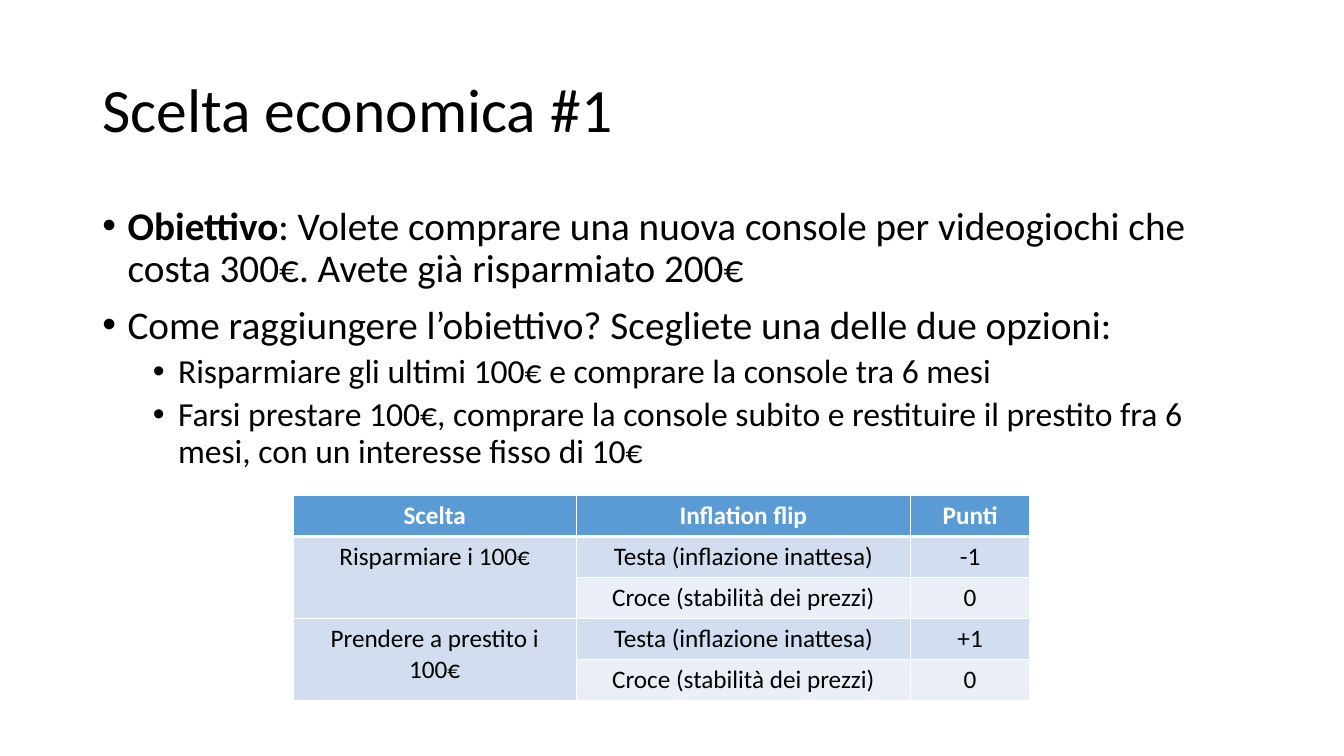
from dataclasses import dataclass

from lxml import etree
from pptx import Presentation
from pptx import util as u
from pptx.dml.color import RGBColor
from pptx.enum import text
from pptx.oxml import ns

EMU_PER_PX = 9525
BLACK, WHITE, HEADER_BLUE = "000000", "FFFFFF", "5B9BD5"
BAND_FILLS = ("D2DEEF", "EAEFF7")


@dataclass(frozen=True)
class Bullet:
    """A list entry, with an optional bold lead-in."""

    wording: str
    lead: str = ""
    level: int = 0


@dataclass(frozen=True)
class Choice:
    """An economic choice and its points for each coin side."""

    name: str
    heads_points: str
    tails_points: str


BULLETS = (
    Bullet(": Volete comprare una nuova console per videogiochi che costa 300€. "
           "Avete già risparmiato 200€", lead="Obiettivo"),
    Bullet("Come raggiungere l’obiettivo? Scegliete una delle due opzioni:"),
    Bullet("Risparmiare gli ultimi 100€ e comprare la console tra 6 mesi", level=1),
    Bullet("Farsi prestare 100€, comprare la console subito e restituire il prestito "
           "fra 6 mesi, con un interesse fisso di 10€", level=1),
)
HEADINGS = ("Scelta", "Inflation flip", "Punti")
COLUMN_WIDTHS = (270, 318, 114)
ROW_HEIGHT = 39
CHOICES = (
    Choice("Risparmiare i 100€", "-1", "0"),
    Choice("Prendere a prestito i 100€", "+1", "0"),
)


def px(length: int) -> u.Emu:
    """Turn pixels into EMU."""
    return u.Emu(length * EMU_PER_PX)


def rgb(value: str) -> RGBColor:
    """Turn a hex string into a colour."""
    return RGBColor.from_string(value)


def write(paragraph, wording: str, *, size: int, color: str = BLACK,
          bold: bool = False, align=text.PP_ALIGN.LEFT) -> None:
    """Append a formatted run to a paragraph."""
    paragraph.alignment = align
    run = paragraph.add_run()
    run.text = wording
    run.font.name = "Calibri"
    run.font.size = u.Pt(size)
    run.font.bold = bold
    run.font.color.rgb = rgb(color)


def place(placeholder, left: int, top: int, width: int, height: int, anchor):
    """Move a placeholder and return its prepared text frame."""
    placeholder.left, placeholder.top = px(left), px(top)
    placeholder.width, placeholder.height = px(width), px(height)
    frame = placeholder.text_frame
    frame.word_wrap = True
    frame.auto_size = text.MSO_AUTO_SIZE.NONE
    frame.vertical_anchor = anchor
    return frame


def add_bullet(paragraph, bullet: Bullet) -> None:
    """Fill one list paragraph."""
    paragraph.level = bullet.level
    paragraph.line_spacing = 0.9
    paragraph.space_before = u.Pt(5 if bullet.level else 10)
    size = 24 if bullet.level else 28
    if bullet.lead:
        write(paragraph, bullet.lead, size=size, bold=True)
    write(paragraph, bullet.wording, size=size)
    properties = paragraph._p.get_or_add_pPr()
    properties.set("marL", str(px(24 + 48 * bullet.level)))
    properties.set("indent", str(px(-24)))
    etree.SubElement(properties, ns.qn("a:buFont"), typeface="Arial")
    etree.SubElement(properties, ns.qn("a:buChar"), char="•")


def style_cell(cell, fill: str, *, top: int = 1, bottom: int = 1) -> None:
    """Give a cell its white borders, in points, and its fill."""
    properties = cell._tc.get_or_add_tcPr()
    for side, width in (("L", 1), ("R", 1), ("T", top), ("B", bottom)):
        line = etree.SubElement(properties, ns.qn(f"a:ln{side}"), w=str(u.Pt(width)))
        solid = etree.SubElement(line, ns.qn("a:solidFill"))
        etree.SubElement(solid, ns.qn("a:srgbClr"), val=WHITE)
    cell.fill.solid()
    cell.fill.fore_color.rgb = rgb(fill)


def add_points_table(slide) -> None:
    """Draw the table of choices, coin flips and points."""
    rows = [HEADINGS]
    for choice in CHOICES:
        rows.append((choice.name, "Testa (inflazione inattesa)", choice.heads_points))
        rows.append(("", "Croce (stabilità dei prezzi)", choice.tails_points))
    points = slide.shapes.add_table(
        len(rows), len(HEADINGS), px(279), px(472),
        px(sum(COLUMN_WIDTHS)), px(ROW_HEIGHT * len(rows))).table
    for column, width in zip(points.columns, COLUMN_WIDTHS):
        column.width = px(width)
    for r, entries in enumerate(rows):
        points.rows[r].height = px(ROW_HEIGHT)
        header = r == 0
        for c, entry in enumerate(entries):
            cell = points.cell(r, c)
            band = BAND_FILLS[0 if c == 0 else (r - 1) % 2]
            style_cell(cell, HEADER_BLUE if header else band,
                       top=3 if r == 1 else 1, bottom=3 if header else 1)
            if entry:
                write(cell.text_frame.paragraphs[0], entry, size=18, bold=header,
                      color=WHITE if header else BLACK, align=text.PP_ALIGN.CENTER)
    for r in range(1, len(rows), 2):
        points.cell(r, 0).merge(points.cell(r + 1, 0))


def main() -> None:
    """Build and save the slide."""
    deck = Presentation()
    deck.slide_width, deck.slide_height = px(1280), px(720)
    slide = deck.slides.add_slide(deck.slide_layouts[1])
    title = place(slide.shapes.title, 88, 38, 1104, 139, text.MSO_ANCHOR.MIDDLE)
    title.paragraphs[0].line_spacing = 0.9
    write(title.paragraphs[0], "Scelta economica #1", size=44)
    body = place(slide.placeholders[1], 88, 192, 1104, 457, text.MSO_ANCHOR.TOP)
    for i, bullet in enumerate(BULLETS):
        add_bullet(body.add_paragraph() if i else body.paragraphs[0], bullet)
    add_points_table(slide)
    deck.save("out.pptx")


if __name__ == "__main__":
    main()
